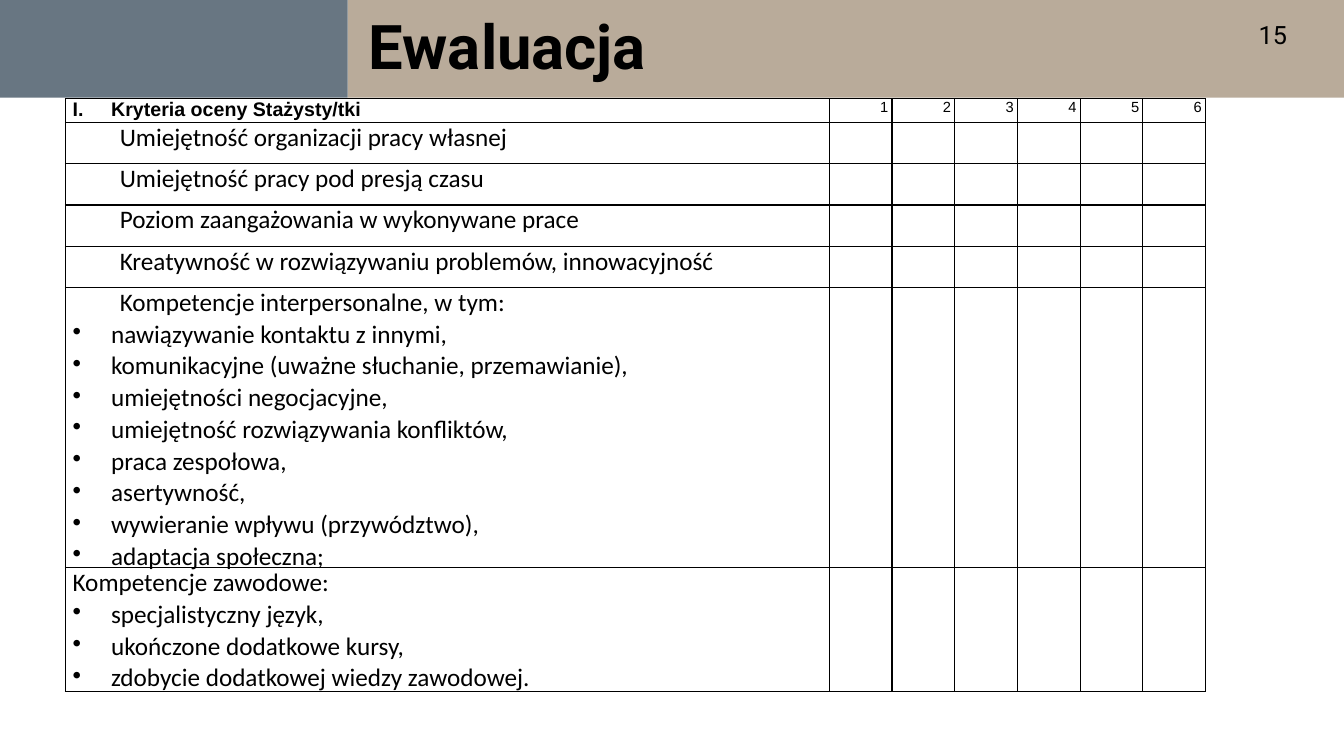
from dataclasses import dataclass

import pptx
import pptx.dml.color
import pptx.enum.shapes
import pptx.enum.text
import pptx.oxml
import pptx.oxml.ns
import pptx.util
from pptx.util import Cm, Pt

ALIGN = pptx.enum.text.PP_ALIGN
ANCHOR = pptx.enum.text.MSO_ANCHOR
BLACK = "000000"
BULLET = '<a:buChar {} char="•"/>'
ROMAN = '<a:buAutoNum {} type="romanUcPeriod"/>'


@dataclass
class Band:
    left: float
    width: float
    color: str


@dataclass
class Line:
    """A table paragraph; lengths in cm, size in points."""
    text: str
    margin: float = 2.08
    indent: float = -0.89
    marker: str = ""
    size: float = 18
    font: str = "Calibri"
    bold: bool = False
    align: ALIGN = ALIGN.LEFT


@dataclass
class Row:
    height: float
    lines: list[Line]


def item(text: str) -> Line:
    return Line(text, 0.97, -0.97, BULLET)


def rgb(color: str) -> pptx.dml.color.RGBColor:
    return pptx.dml.color.RGBColor.from_string(color)


def xml(markup: str):
    return pptx.oxml.parse_xml(markup.format(pptx.oxml.ns.nsdecls("a")))


def add_run(p, text: str, size: float, font: str, bold: bool = False) -> None:
    r = p.add_run()
    r.text = text
    r.font.size = Pt(size)
    r.font.name = font
    r.font.bold = bold
    r.font.color.rgb = rgb(BLACK)


def add_band(s, band: Band) -> None:
    sp = s.shapes.add_shape(pptx.enum.shapes.MSO_SHAPE.RECTANGLE,
                            Cm(band.left), 0, Cm(band.width), Cm(2.46))
    sp.shadow.inherit = False
    sp.fill.solid()
    sp.fill.fore_color.rgb = rgb(band.color)
    sp.line.fill.background()


def format_cell(cell) -> None:
    cell.margin_left = cell.margin_right = Cm(0.18)
    cell.margin_top = cell.margin_bottom = 0
    cell.vertical_anchor = ANCHOR.TOP
    tcPr = cell._tc.get_or_add_tcPr()
    for side in "LRTB":
        tcPr.append(xml(f'<a:ln{side} {{}} w="12700"><a:solidFill>'
                        f'<a:srgbClr val="{BLACK}"/></a:solidFill></a:ln{side}>'))
    cell.fill.background()


def write_lines(cell, lines: list[Line]) -> None:
    tf = cell.text_frame
    for i, line in enumerate(lines):
        p = tf.add_paragraph() if i else tf.paragraphs[0]
        pPr = p._p.get_or_add_pPr()
        pPr.set("marL", str(Cm(line.margin)))
        pPr.set("indent", str(Cm(line.indent)))
        if line.marker:
            pPr.append(xml(line.marker))
        if i:
            p.space_before = Pt(0.7)
        p.alignment = line.align
        add_run(p, line.text, line.size, line.font, line.bold)


BANDS = [Band(8.76, 25.11, "B9AB9A"), Band(0, 8.76, "687682")]
GRADES = range(1, 7)
ROWS = [
    Row(0.58, [Line("Kryteria oceny Stażysty/tki", 0.97, -0.97, ROMAN,
                    14, "Arial", True)]),
    Row(1.04, [Line("Umiejętność organizacji pracy własnej")]),
    Row(1.04, [Line("Umiejętność pracy pod presją czasu")]),
    Row(1.04, [Line("Poziom zaangażowania w wykonywane prace")]),
    Row(1.04, [Line("Kreatywność w rozwiązywaniu problemów, innowacyjność")]),
    Row(6.91, [Line("Kompetencje interpersonalne, w tym:")] + [item(t) for t in (
        "nawiązywanie kontaktu z innymi,",
        "komunikacyjne (uważne słuchanie, przemawianie),",
        "umiejętności negocjacyjne,",
        "umiejętność rozwiązywania konfliktów,",
        "praca zespołowa,",
        "asertywność,",
        "wywieranie wpływu (przywództwo),",
        "adaptacja społeczna;")]),
    Row(3.05, [Line("Kompetencje zawodowe:", 0, 0)] + [item(t) for t in (
        "specjalistyczny język,",
        "ukończone dodatkowe kursy,",
        "zdobycie dodatkowej wiedzy zawodowej.")]),
]


def main() -> None:
    prs = pptx.Presentation()
    prs.slide_width, prs.slide_height = Cm(33.87), Cm(19.05)
    s = prs.slides.add_slide(prs.slide_layouts[5])

    # Header bands, kept behind the title
    for band in BANDS:
        add_band(s, band)
    title = s.shapes.title
    title.element.getparent().append(title.element)

    # Title
    title.left, title.top, title.width, title.height = (
        Cm(9.04), Cm(0.36), Cm(22.15), Cm(1.78))
    tf = title.text_frame
    tf.vertical_anchor = ANCHOR.MIDDLE
    p = tf.paragraphs[0]
    p.alignment = ALIGN.LEFT
    p.line_spacing = 0.9
    add_run(p, "Ewaluacja", 44, "Roboto", True)

    # Page number
    tf = s.shapes.add_textbox(Cm(31.47), Cm(0.36), Cm(1.85), Cm(1.78)).text_frame
    tf.word_wrap = True
    add_run(tf.paragraphs[0], "15", 18, "Roboto")

    # Evaluation table
    height = sum(row.height for row in ROWS)
    table = s.shapes.add_table(len(ROWS), 1 + len(GRADES), Cm(1.65), Cm(2.49),
                               Cm(28.73), Cm(height)).table
    table.first_row = table.horz_banding = False
    table.columns[0].width = Cm(19.25)
    for grade in GRADES:
        table.columns[grade].width = Cm(1.58)
    for cell in table.iter_cells():
        format_cell(cell)
    for i, row in enumerate(ROWS):
        table.rows[i].height = Cm(row.height)
        write_lines(table.cell(i, 0), row.lines)
    for grade in GRADES:
        write_lines(table.cell(0, grade), [
            Line(str(grade), size=10.5, font="Arial", align=ALIGN.CENTER)])

    prs.save("out.pptx")


if __name__ == "__main__":
    main()
